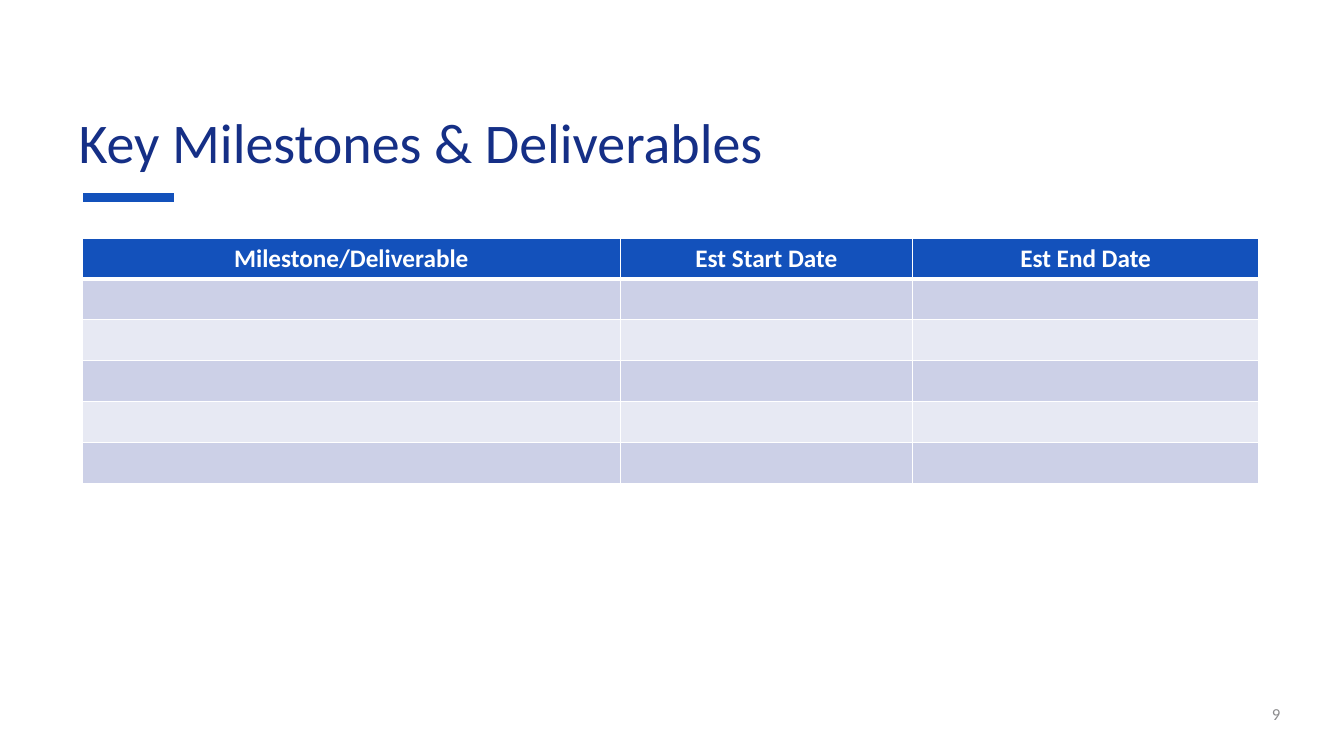
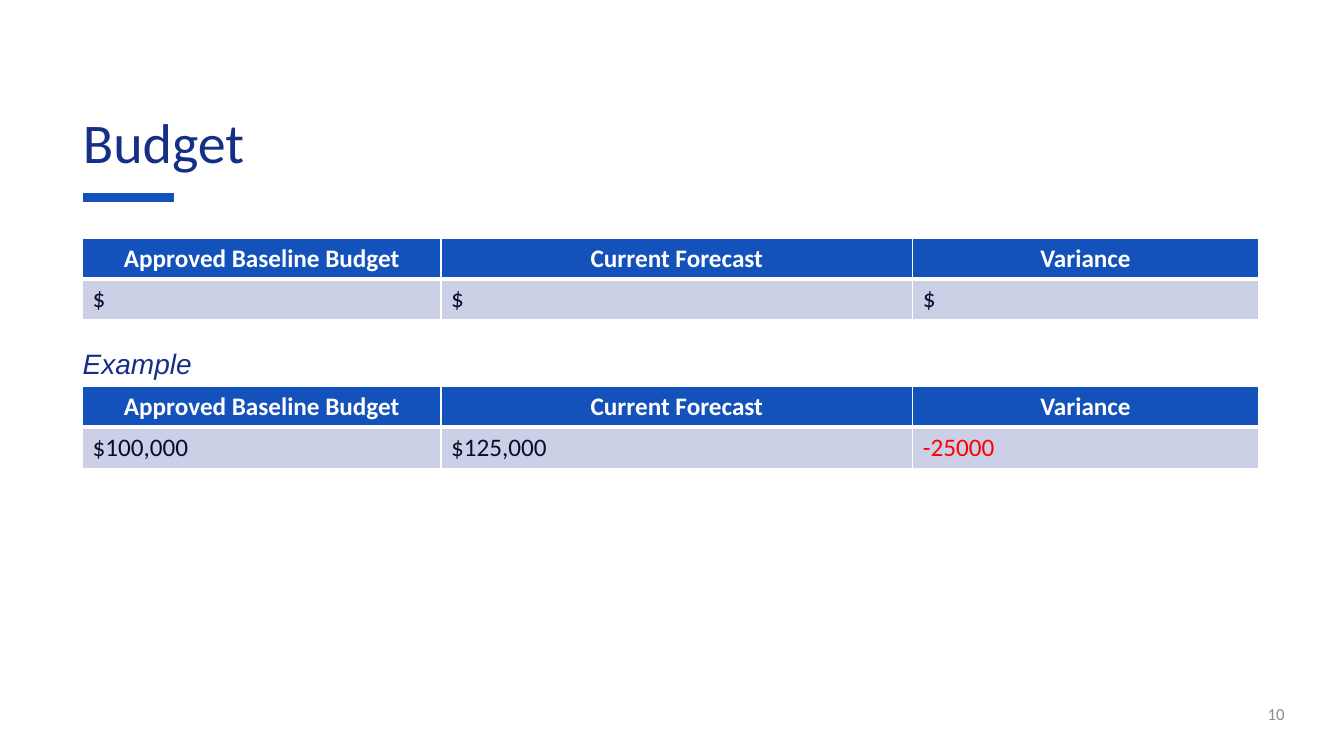
from pptx import Presentation
from pptx.dml.color import RGBColor
from pptx.enum.shapes import MSO_CONNECTOR
from pptx.enum.text import MSO_ANCHOR, MSO_AUTO_SIZE, PP_ALIGN
from pptx.oxml.ns import qn
from pptx.util import Pt
from lxml import etree

LEFT, CENTER = PP_ALIGN.LEFT, PP_ALIGN.CENTER
MIDDLE, BOTTOM = MSO_ANCHOR.MIDDLE, MSO_ANCHOR.BOTTOM
NO_AUTOFIT = MSO_AUTO_SIZE.NONE
STRAIGHT = MSO_CONNECTOR.STRAIGHT

# Shared style
FONT, LABEL_FONT = "Calibri", "Arial"
NAVY, BLUE, INK, WHITE = "152F86", "1351BB", "060F2A", "FFFFFF"
RED, GRAY = "FF0000", "8C8C8E"
BANDS = ("CCD0E7", "E7E9F3")
MARGIN, ROW_HEIGHT = 59, 29.2
THIN, THICK = 1, 3

# Content
BUDGET_HEADER = ["Approved Baseline Budget", "Current Forecast", "Variance"]
BUDGET_WIDTHS = [256, 337, 247]
SLIDES = [
    {
        "title": "Key Milestones & Deliverables", "title_left": 49, "number": "9",
        "tables": [
            {"top": 170, "widths": [384, 209, 247],
             "header": ["Milestone/Deliverable", "Est Start Date", "Est End Date"],
             "rows": [["", "", ""]] * 5},
        ],
    },
    {
        "title": "Budget", "title_left": 52, "number": "10",
        "tables": [
            {"top": 170, "widths": BUDGET_WIDTHS, "header": BUDGET_HEADER,
             "rows": [["$", "$", "$"]]},
            {"top": 276, "widths": BUDGET_WIDTHS, "header": BUDGET_HEADER,
             "rows": [["$100,000", "$125,000", "-25000"]], "label": "Example"},
        ],
    },
]


def rgb(color):
    return RGBColor.from_string(color)


def style(para, size, color, font=FONT, align=LEFT, bold=False, italic=False):
    para.alignment = align
    para.font.name, para.font.size = font, Pt(size)
    para.font.bold, para.font.italic = bold, italic
    para.font.color.rgb = rgb(color)


def place(shape, left, top, width, height):
    shape.left, shape.top = Pt(left), Pt(top)
    shape.width, shape.height = Pt(width), Pt(height)


def add_title(page, text, left):
    title = page.shapes.title
    place(title, left, 57, 855, 72)
    frame = title.text_frame
    frame.text = text
    frame.vertical_anchor, frame.auto_size = BOTTOM, NO_AUTOFIT
    para = frame.paragraphs[0]
    para.line_spacing = 0.9
    style(para, 40, NAVY)


def add_accent(page):
    accent = page.shapes.add_connector(
        STRAIGHT, Pt(MARGIN + 65), Pt(141), Pt(MARGIN), Pt(141))
    accent.line.color.rgb = rgb(BLUE)
    accent.line.width = Pt(6)
    etree.SubElement(accent._element.spPr, qn("a:effectLst"))


def add_text(page, text, bounds, anchor, spacing=1.0, **look):
    box = page.shapes.add_textbox(*map(Pt, bounds))
    frame = box.text_frame
    frame.word_wrap = True
    frame.vertical_anchor = anchor
    frame.text = text
    para = frame.paragraphs[0]
    para.line_spacing = spacing
    style(para, **look)


def set_borders(cell, top, bottom):
    properties = cell._tc.get_or_add_tcPr()
    widths = {"a:lnL": THIN, "a:lnR": THIN, "a:lnT": top, "a:lnB": bottom}
    for side, width in widths.items():
        line = etree.SubElement(properties, qn(side), w=str(Pt(width)))
        fill = etree.SubElement(line, qn("a:solidFill"))
        etree.SubElement(fill, qn("a:srgbClr"), val=WHITE)


def add_grid(page, top, widths, header, rows, label=None):
    lines = [header] + rows
    table = page.shapes.add_table(
        len(lines), len(widths), Pt(MARGIN), Pt(top),
        Pt(sum(widths)), Pt(ROW_HEIGHT * len(lines))).table
    for column, width in zip(table.columns, widths):
        column.width = Pt(width)
    for r, values in enumerate(lines):
        table.rows[r].height = Pt(ROW_HEIGHT)
        is_header = r == 0
        for c, value in enumerate(values):
            cell = table.cell(r, c)
            set_borders(cell, THICK if r == 1 else THIN, THICK if is_header else THIN)
            cell.fill.solid()
            cell.fill.fore_color.rgb = rgb(BLUE if is_header else BANDS[(r - 1) % 2])
            cell.text = value
            para = cell.text_frame.paragraphs[0]
            if is_header:
                style(para, 18, WHITE, align=CENTER, bold=True)
            else:
                style(para, 18, RED if value.startswith("-") else INK)
    if label:
        add_text(page, label, (52, top - 29, 108, 28), BOTTOM, spacing=0.8,
                 size=20, color=NAVY, font=LABEL_FONT, italic=True)


def main():
    deck = Presentation()
    deck.slide_width, deck.slide_height = Pt(960), Pt(540)
    title_only = deck.slide_layouts[5]
    for content in SLIDES:
        page = deck.slides.add_slide(title_only)
        add_accent(page)
        add_title(page, content["title"], content["title_left"])
        for grid in content["tables"]:
            add_grid(page, **grid)
        add_text(page, content["number"], (864, 495, 95, 29), MIDDLE,
                 size=12, color=GRAY, align=CENTER)
    deck.save("out.pptx")


if __name__ == "__main__":
    main()
